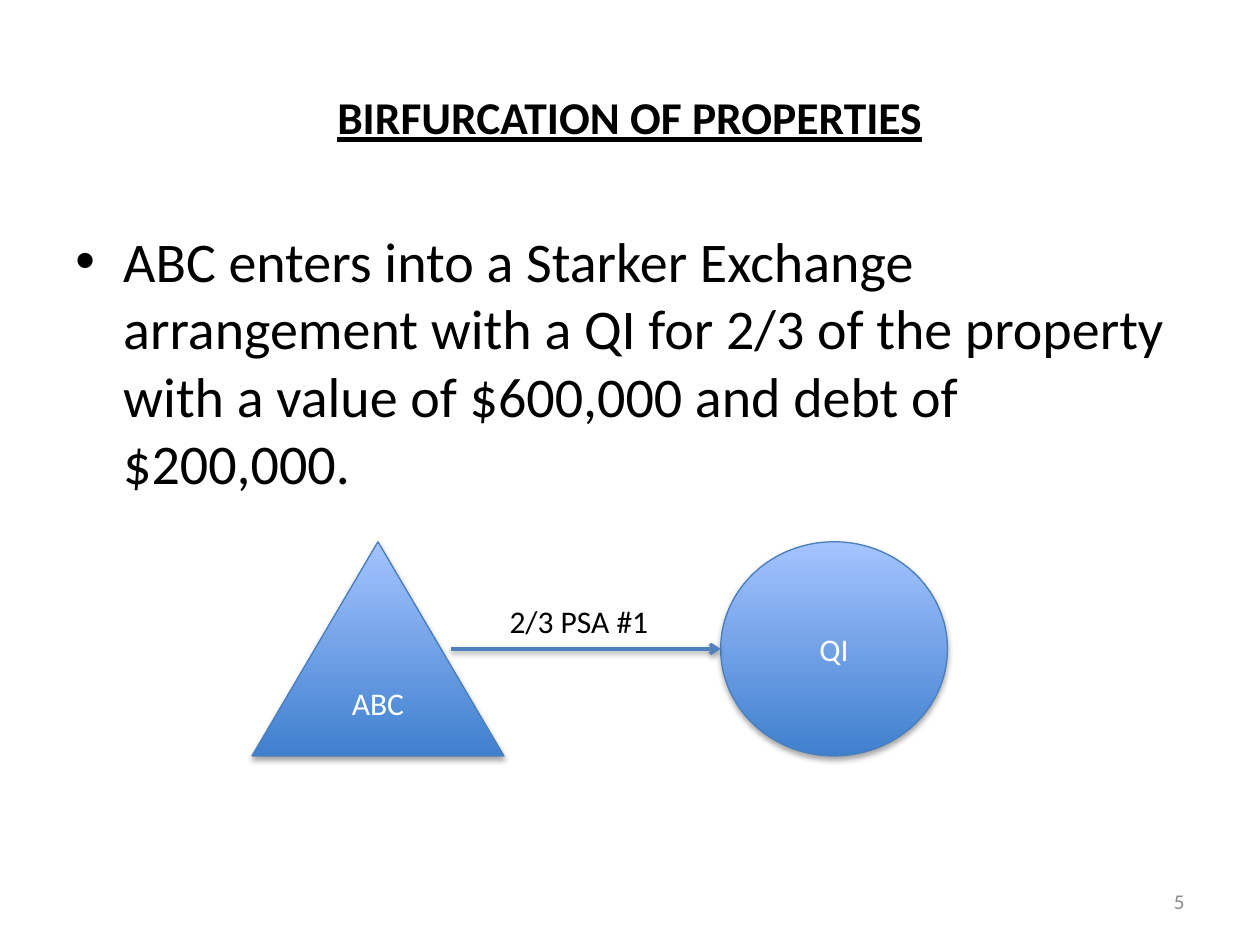
import pptx
import pptx.util
import pptx.dml.color
import pptx.enum.shapes
import pptx.enum.text
import pptx.oxml
import pptx.oxml.ns

PX = 9144  # EMU per px, 100 px to the inch
ALIGN = pptx.enum.text.PP_ALIGN
ANCHOR = pptx.enum.text.MSO_ANCHOR
SHAPE = pptx.enum.shapes.MSO_SHAPE
THEME = {
    "font": "Calibri",
    "ink": "000000", "number": "8C8C8C", "on_shape": "FFFFFF",
    "shape_bottom": "3F80CE", "shape_top": "A4C4FF",
    "outline": "4B7EBC", "arrow": "4F81BD",
    "title_size": 26, "body_size": 32, "label_size": 18, "number_size": 12,
}


def write(box, text, size, color, align=ALIGN.CENTER, anchor=ANCHOR.MIDDLE, **extra):
    """Put one formatted paragraph in a shape and return it."""
    frame = box.text_frame
    frame.word_wrap = True
    frame.vertical_anchor = anchor
    para = frame.paragraphs[0]
    para.alignment = align
    span = para.add_run()
    span.text = text
    formats = {"name": THEME["font"], "size": pptx.util.Pt(THEME[size]), **extra}
    for name, value in formats.items():
        setattr(span.font, name, value)
    span.font.color.rgb = pptx.dml.color.RGBColor.from_string(THEME[color])
    return para


def add_shadow(item, distance, opacity):
    """Give a shape or connector a soft black shadow straight below it."""
    properties = item._element.spPr
    for old in properties.findall(pptx.oxml.ns.qn("a:effectLst")):
        properties.remove(old)
    properties.append(pptx.oxml.parse_xml(
        f'<a:effectLst {pptx.oxml.ns.nsdecls("a")}>'
        f'<a:outerShdw blurRad="40000" dist="{distance}" dir="5400000" rotWithShape="0">'
        f'<a:srgbClr val="000000"><a:alpha val="{opacity * 1000}"/></a:srgbClr>'
        '</a:outerShdw></a:effectLst>'))


deck = pptx.Presentation()
deck.slide_width, deck.slide_height = 1000 * PX, 750 * PX
page = deck.slides.add_slide(deck.slide_layouts[6])

# Title, body and page number
title = page.shapes.add_textbox(50 * PX, 30 * PX, 900 * PX, 125 * PX)
write(title, "BIRFURCATION OF PROPERTIES", "title_size", "ink", bold=True, underline=True)

body = page.shapes.add_textbox(50 * PX, 175 * PX, 900 * PX, 495 * PX)
bullet = write(
    body,
    "ABC enters into a Starker Exchange arrangement with a QI for 2/3 of the property "
    "with a value of $600,000 and debt of $200,000.",
    "body_size", "ink", ALIGN.LEFT, ANCHOR.TOP)
bullet_properties = bullet._p.get_or_add_pPr()
for name, value in {"marL": 38 * PX, "indent": -38 * PX}.items():
    bullet_properties.set(name, str(value))
for tag in ('buFont typeface="Arial"', 'buChar char="•"'):
    bullet_properties.append(pptx.oxml.parse_xml(
        f'<a:{tag} {pptx.oxml.ns.nsdecls("a")}/>'))

number = page.shapes.add_textbox(717 * PX, 695 * PX, 233 * PX, 40 * PX)
write(number, "5", "number_size", "number", ALIGN.RIGHT)

# The two parties
for kind, left, width, name in (
    (SHAPE.ISOSCELES_TRIANGLE, 200, 200, "ABC"),
    (SHAPE.OVAL, 572, 180, "QI"),
):
    party = page.shapes.add_shape(kind, left * PX, 430 * PX, width * PX, 170 * PX)
    party.fill.gradient()
    party.fill.gradient_angle = 90
    for stop, color in zip(party.fill.gradient_stops, ("shape_bottom", "shape_top")):
        stop.color.rgb = pptx.dml.color.RGBColor.from_string(THEME[color])
    party.line.color.rgb = pptx.dml.color.RGBColor.from_string(THEME["outline"])
    party.line.width = pptx.util.Pt(0.75)
    add_shadow(party, 23000, 35)
    write(party, name, "label_size", "on_shape")

# The agreement between them
arrow = page.shapes.add_connector(
    pptx.enum.shapes.MSO_CONNECTOR.STRAIGHT, 358 * PX, 515 * PX, 572 * PX, 515 * PX)
arrow.line.color.rgb = pptx.dml.color.RGBColor.from_string(THEME["arrow"])
arrow.line.width = pptx.util.Pt(2)
arrow.line._get_or_add_ln().append(pptx.oxml.parse_xml(
    f'<a:tailEnd {pptx.oxml.ns.nsdecls("a")} type="arrow"/>'))
add_shadow(arrow, 20000, 38)

label = page.shapes.add_textbox(358 * PX, 473 * PX, 203 * PX, 40 * PX)
write(label, "2/3 PSA #1", "label_size", "ink", anchor=ANCHOR.TOP)

deck.save("out.pptx")
